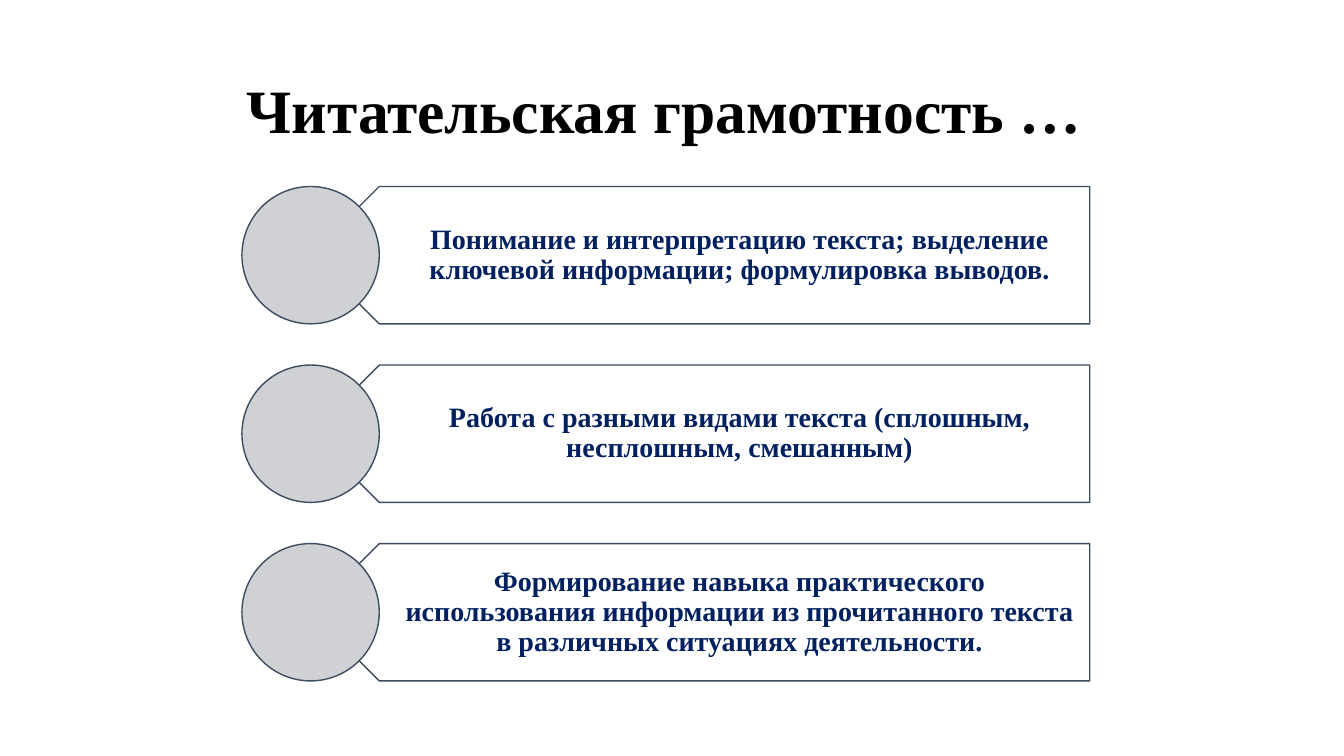
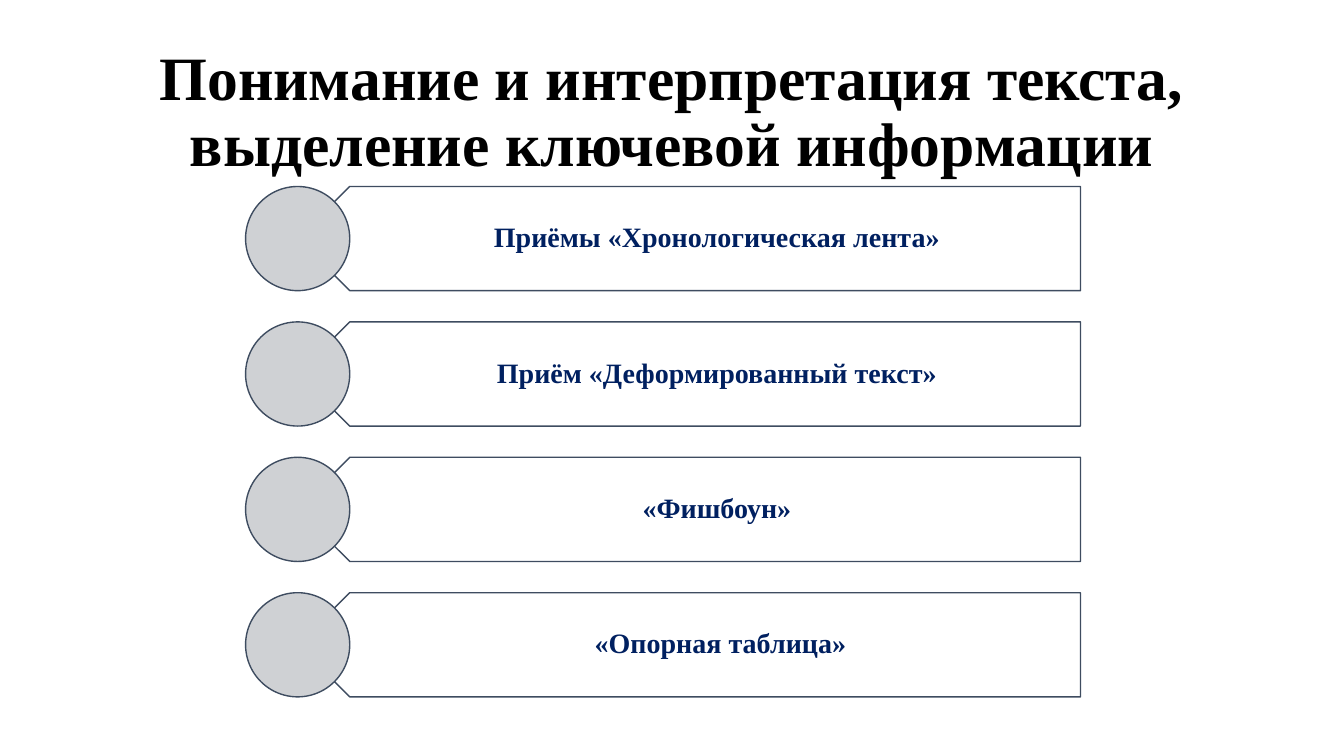
from dataclasses import dataclass

from pptx import Presentation
from pptx.dml.color import RGBColor
from pptx.enum.shapes import MSO_SHAPE
from pptx.enum.text import MSO_ANCHOR, PP_ALIGN
from pptx.shapes.autoshape import Shape
from pptx.slide import Slide
from pptx.util import Pt

FONT = "Times New Roman"
BLACK, NAVY = "000000", "002060"
WHITE, GREY, SLATE = "FFFFFF", "CFD1D4", "3E4C60"
TOP = 133.2
GAP = 0.3


@dataclass
class Box:
    left: float
    top: float
    width: float
    height: float


@dataclass
class Page:
    title: str
    left: float
    right: float
    size: float
    items: list[str]


TITLE = Box(66, 28.8, 828, 104.4)

PAGES = [
    Page("Читательская грамотность … ", 172.8, 778.4, 98.1, [
        "Понимание и интерпретацию текста; выделение ключевой информации; "
        "формулировка выводов.",
        "Работа с разными видами текста (сплошным, несплошным, смешанным)",
        "Формирование навыка практического использования информации "
        "из прочитанного текста в различных ситуациях деятельности.",
    ]),
    Page("Понимание и интерпретация текста, выделение ключевой информации",
         175.4, 771.8, 74.4, [
             "Приёмы «Хронологическая лента»",
             "Приём «Деформированный текст»",
             "«Фишбоун»",
             " «Опорная таблица»",
         ]),
]


def color(code: str) -> RGBColor:
    return RGBColor.from_string(code)


def place(box: Box) -> tuple[Pt, Pt, Pt, Pt]:
    return Pt(box.left), Pt(box.top), Pt(box.width), Pt(box.height)


def draw(slide: Slide, kind: MSO_SHAPE, box: Box, fill: str) -> Shape:
    shape = slide.shapes.add_shape(kind, *place(box))
    shape.shadow.inherit = False
    shape.fill.solid()
    shape.fill.fore_color.rgb = color(fill)
    shape.line.color.rgb = color(SLATE)
    shape.line.width = Pt(1)
    return shape


def write(slide: Slide, box: Box, text: str, size: float, ink: str,
          inset: tuple[float, float, float] = (7.2, 3.6, 7.2)) -> None:
    frame = slide.shapes.add_textbox(*place(box)).text_frame
    frame.word_wrap = True
    frame.vertical_anchor = MSO_ANCHOR.MIDDLE
    left, edge, right = inset
    frame.margin_left, frame.margin_right = Pt(left), Pt(right)
    frame.margin_top = frame.margin_bottom = Pt(edge)
    para = frame.paragraphs[0]
    para.text = text
    para.alignment = PP_ALIGN.CENTER
    para.line_spacing = 0.9
    para.font.name = FONT
    para.font.size = Pt(size)
    para.font.bold = True
    para.font.color.rgb = color(ink)


def row(slide: Slide, page: Page, top: float, text: str) -> None:
    size = page.size
    start = page.left + size / 2
    label = start + size / 4
    plate = Box(start, top, page.right - start, size)
    draw(slide, MSO_SHAPE.PENTAGON, plate, WHITE).rotation = 180
    write(slide, Box(label, top, page.right - label, size), text, 20, NAVY,
          (0.44 * size, 5.8, 11.5))
    draw(slide, MSO_SHAPE.OVAL, Box(page.left, top, size, size), GREY)


def main() -> None:
    deck = Presentation()
    deck.slide_width, deck.slide_height = Pt(960), Pt(540)
    for page in PAGES:
        slide = deck.slides.add_slide(deck.slide_layouts[6])
        write(slide, TITLE, page.title, 44, BLACK)
        for i, text in enumerate(page.items):
            row(slide, page, TOP + i * page.size * (1 + GAP), text)
    deck.save("out.pptx")


if __name__ == "__main__":
    main()
